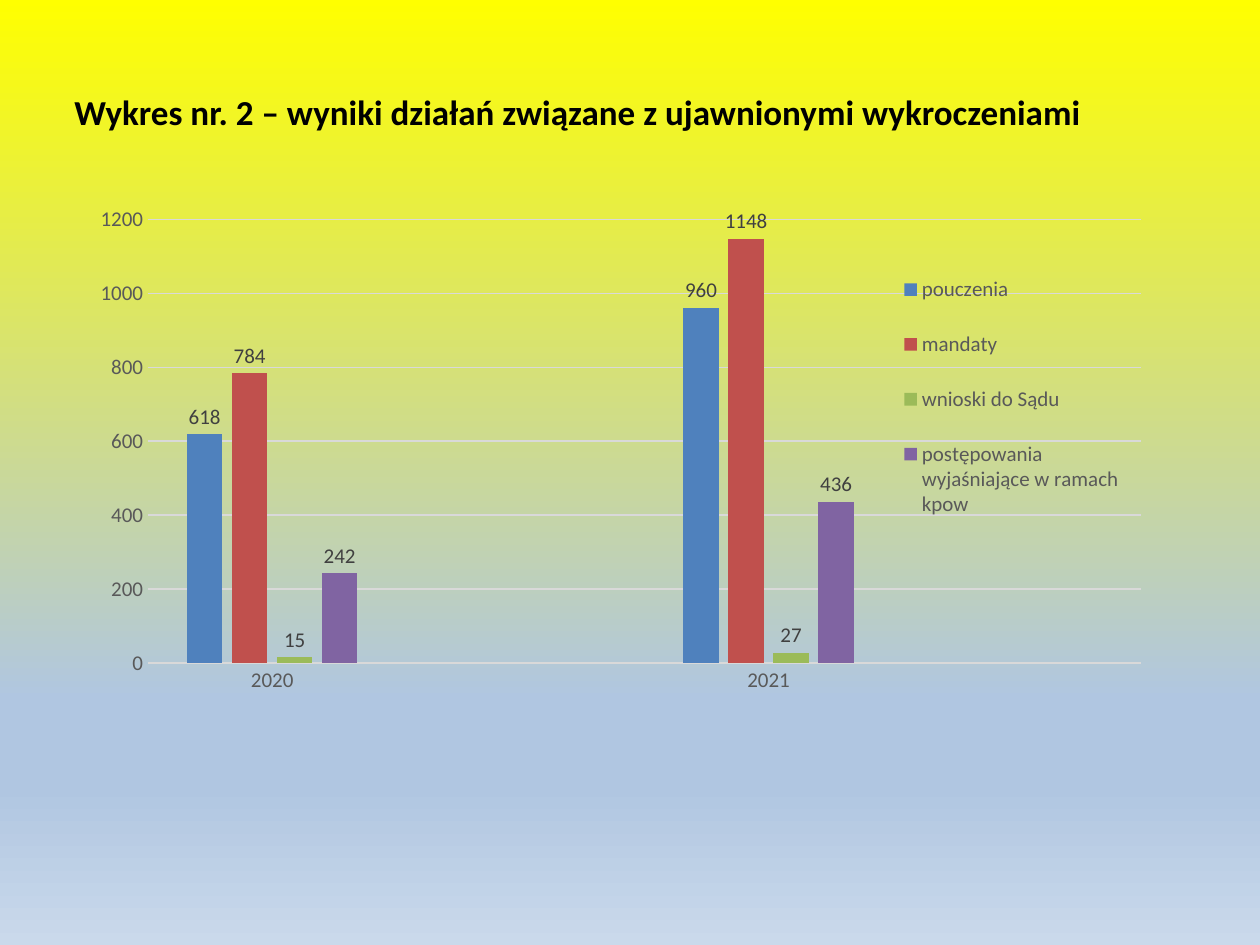
import pptx
import pptx.chart.data
import pptx.dml.color
import pptx.enum.chart
import pptx.enum.text
import pptx.oxml
import pptx.oxml.ns
import pptx.util
from pptx.util import Inches

FONT = "Calibri"
GREY_TEXT = "595959"
GREY_LINE = "D9D9D9"
BACKGROUND_STOPS = [(0, "FFFF00"), (74, "B0C6E1"), (83, "B0C6E1"), (100, "CAD9EB")]
YEARS = ["2020", "", "2021", ""]
# name, colour, values for 2020 and 2021
RESULTS = [
    ("pouczenia", "4F81BD", 618, 960),
    ("mandaty", "C0504D", 784, 1148),
    ("wnioski do Sądu", "9BBB59", 15, 27),
    ("postępowania wyjaśniające w ramach kpow", "8064A2", 242, 436),
]


def colour(hex_value):
    return pptx.dml.color.RGBColor.from_string(hex_value)


def style_font(font, size, hex_value, bold=False):
    font.name = FONT
    font.size = pptx.util.Pt(size)
    font.bold = bold
    font.color.rgb = colour(hex_value)


def style_line(line):
    line.color.rgb = colour(GREY_LINE)
    line.width = pptx.util.Pt(0.75)


def paint_background(slide):
    fill = slide.background.fill
    fill.gradient()
    fill.gradient_angle = 270
    stops = slide.element.find(".//" + pptx.oxml.ns.qn("a:gsLst"))
    for stop in list(stops):
        stops.remove(stop)
    for percent, hex_value in BACKGROUND_STOPS:
        stops.append(pptx.oxml.parse_xml(
            f'<a:gs {pptx.oxml.ns.nsdecls("a")} pos="{percent * 1000}">'
            f'<a:srgbClr val="{hex_value}"/></a:gs>'))


def add_title(slide, text):
    title = slide.shapes.title
    title.left, title.top = Inches(0.49), Inches(0.52)
    title.width, title.height = Inches(8.7), Inches(0.58)
    frame = title.text_frame
    frame.word_wrap = True
    frame.auto_size = pptx.enum.text.MSO_AUTO_SIZE.NONE
    frame.vertical_anchor = pptx.enum.text.MSO_ANCHOR.BOTTOM
    para = frame.paragraphs[0]
    para.alignment = pptx.enum.text.PP_ALIGN.LEFT
    span = para.add_run()
    span.text = text
    style_font(span.font, 20, "000000", bold=True)


def layout_xml(x, y, width, height, inner=False):
    """Manual layout in fractions of the chart area."""
    target = '<c:layoutTarget val="inner"/>' if inner else ""
    return pptx.oxml.parse_xml(
        f'<c:layout {pptx.oxml.ns.nsdecls("c")}><c:manualLayout>{target}'
        '<c:xMode val="edge"/><c:yMode val="edge"/>'
        f'<c:x val="{x}"/><c:y val="{y}"/><c:w val="{width}"/><c:h val="{height}"/>'
        '</c:manualLayout></c:layout>')


def place(parent, layout, before):
    """Replace the layout of a chart part, ahead of the named element."""
    for old in parent.findall(pptx.oxml.ns.qn("c:layout")):
        parent.remove(old)
    parent.find(pptx.oxml.ns.qn(before)).addprevious(layout)


def style_axes(chart):
    for axis in (chart.category_axis, chart.value_axis):
        axis.major_tick_mark = pptx.enum.chart.XL_TICK_MARK.NONE
        axis.minor_tick_mark = pptx.enum.chart.XL_TICK_MARK.NONE
        style_font(axis.tick_labels.font, 12, GREY_TEXT)
    style_line(chart.category_axis.format.line)
    values = chart.value_axis
    values.format.line.fill.background()
    values.minimum_scale, values.maximum_scale, values.major_unit = 0, 1200, 200
    values.has_major_gridlines = True
    style_line(values.major_gridlines.format.line)


def style_series(series, hex_value):
    series.format.fill.solid()
    series.format.fill.fore_color.rgb = colour(hex_value)
    series.invert_if_negative = False
    labels = series.data_labels
    labels.show_value = True
    labels.position = pptx.enum.chart.XL_LABEL_POSITION.OUTSIDE_END
    style_font(labels.font, 12, "404040")


def add_legend(chart):
    chart.has_legend = True
    legend = chart.legend
    legend.position = pptx.enum.chart.XL_LEGEND_POSITION.BOTTOM
    legend.include_in_layout = True
    style_font(legend.font, 12, GREY_TEXT)
    place(legend._element, layout_xml(0.77, 0.18, 0.22, 0.54), "c:overlay")


def add_results_chart(slide):
    data = pptx.chart.data.CategoryChartData()
    data.categories = YEARS
    for name, _, first, second in RESULTS:
        data.add_series(name, (first, None, second, None))
    chart = slide.shapes.add_chart(
        pptx.enum.chart.XL_CHART_TYPE.COLUMN_CLUSTERED,
        Inches(0.49), Inches(1.17), Inches(8.57), Inches(4.4), data).chart
    style_font(chart.font, 10, "000000")
    chart.has_title = False
    plot = chart.plots[0]
    plot.gap_width, plot.overlap = 219, -27
    plot.vary_by_categories = False
    for series, result in zip(plot.series, RESULTS):
        style_series(series, result[1])
    style_axes(chart)
    add_legend(chart)
    plot_area = chart._chartSpace.chart.plotArea
    place(plot_area, layout_xml(0.08, 0.13, 0.92, 0.8, inner=True), "c:barChart")


def main():
    deck = pptx.Presentation()
    deck.slide_width, deck.slide_height = Inches(10), Inches(7.5)
    slide = deck.slides.add_slide(deck.slide_layouts.get_by_name("Title Only"))
    paint_background(slide)
    add_title(slide, "Wykres nr. 2 – wyniki działań związane z ujawnionymi wykroczeniami")
    add_results_chart(slide)
    deck.save("out.pptx")


if __name__ == "__main__":
    main()
